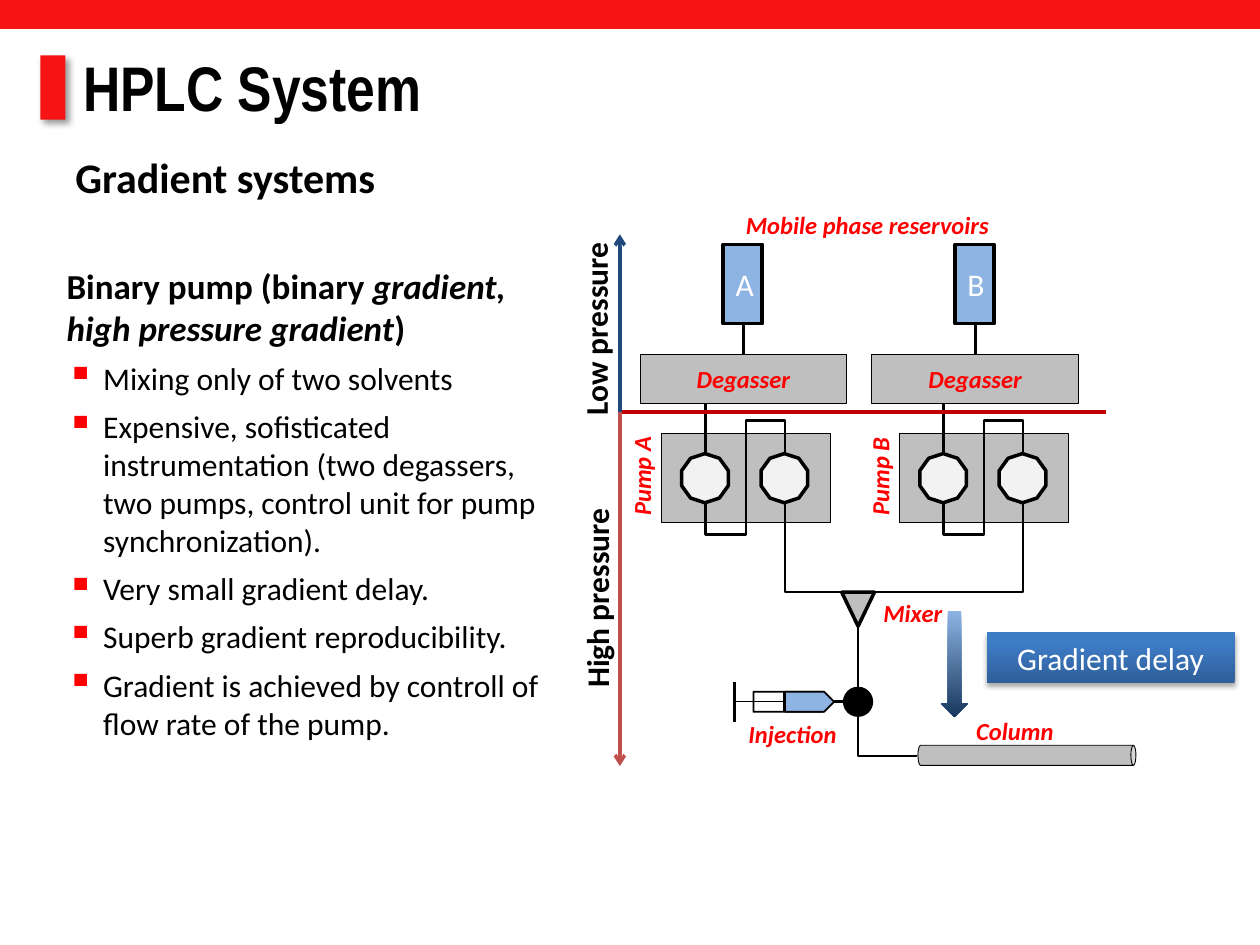
from lxml import etree
from pptx import Presentation
from pptx.dml.color import RGBColor
from pptx.enum.shapes import MSO_CONNECTOR as Link, MSO_SHAPE as Form
from pptx.enum.text import MSO_ANCHOR as Anchor, PP_ALIGN as Align
from pptx.oxml.ns import qn
from pptx.util import Inches, Pt

RED, BAR, GRAY, BLUE, BLACK, WHITE = (
    "FF0000", "F51313", "BFBFBF", "8EB4E3", "000000", "FFFFFF")


def color(code):
    return RGBColor.from_string(code)


def add(parent, tag, **attrs):
    return etree.SubElement(parent, qn(tag), {k: str(v) for k, v in attrs.items()})


def write(para, text, size=14, bold=False, italic=False, ink=BLACK,
          font="Calibri", align=Align.LEFT):
    para.alignment = align
    run = para.add_run()
    run.text = text
    run.font.size, run.font.name = Pt(size), font
    run.font.bold, run.font.italic = bold, italic
    run.font.color.rgb = color(ink)


class Board:
    tag = dict(size=14, bold=True, italic=True, ink=RED, align=Align.CENTER)
    label = dict(size=18, ink=WHITE, align=Align.CENTER)

    def __init__(self, slide):
        self.slide = slide
        self.shapes = slide.shapes

    def paint(self, item, fill, edge, width):
        """Fill is a hex colour, a list of (position, colour) stops or None."""
        item.shadow.inherit = False
        if isinstance(fill, list):
            item.fill.gradient()
            for stop, (pos, code) in zip(item.fill.gradient_stops, fill):
                stop.position, stop.color.rgb = pos, color(code)
        elif fill:
            item.fill.solid()
            item.fill.fore_color.rgb = color(fill)
        else:
            item.fill.background()
        if width:
            item.line.color.rgb, item.line.width = color(edge), Pt(width)
        else:
            item.line.fill.background()

    def shape(self, form, x, y, w, h, fill=None, width=0, turn=0, adj=(),
              text="", **style):
        item = self.shapes.add_shape(form, *map(Inches, (x, y, w, h)))
        self.paint(item, fill, BLACK, width)
        item.rotation = turn
        for i, value in enumerate(adj):
            item.adjustments[i] = value
        if text:
            item.text_frame.vertical_anchor = Anchor.MIDDLE
            write(item.text_frame.paragraphs[0], text, **style)
        return item

    def shade(self, item, alpha, blur, dist, angle):
        effects = item._element.spPr.find(qn("a:effectLst"))
        drop = add(effects, "a:outerShdw", blurRad=Pt(blur), dist=Pt(dist),
                   dir=angle * 60000, algn="tl", rotWithShape=0)
        add(add(drop, "a:srgbClr", val=BLACK), "a:alpha", val=alpha * 1000)

    def line(self, x1, y1, x2, y2, width=1.5, ink=BLACK, arrow=False):
        item = self.shapes.add_connector(
            Link.STRAIGHT, *map(Inches, (x1, y1, x2, y2)))
        item.line.color.rgb, item.line.width = color(ink), Pt(width)
        if arrow:
            add(item.line._get_or_add_ln(), "a:tailEnd", type="arrow")
        add(item._element.spPr, "a:effectLst")

    def tube(self, *points):
        (x, y), *rest = [(Inches(a), Inches(b)) for a, b in points]
        path = self.shapes.build_freeform(x, y)
        path.add_line_segments(rest, close=False)
        self.paint(path.convert_to_shape(), None, BLACK, 1.5)

    def text(self, x, y, w, h, text="", turn=0, **style):
        box = self.shapes.add_textbox(*map(Inches, (x, y, w, h)))
        box.rotation = turn
        box.text_frame.word_wrap = True
        if text:
            write(box.text_frame.paragraphs[0], text, **style)
        return box.text_frame

    def title(self, text):
        item = self.shapes.title
        item.left, item.top, item.width, item.height = map(
            Inches, (0.56, 0.33, 9.1, 0.71))
        item.text_frame.vertical_anchor = Anchor.MIDDLE
        write(item.text_frame.paragraphs[0], text, size=36, bold=True,
              font="Arial Narrow")

    def bullet(self, frame, text):
        para = frame.add_paragraph()
        props = para._p.get_or_add_pPr()
        props.set("marL", str(Inches(0.29)))
        props.set("indent", str(-Inches(0.29)))
        add(add(props, "a:buClr"), "a:srgbClr", val=RED)
        add(props, "a:buSzPct", val=120000)
        add(props, "a:buChar", char="▪")
        para.space_before = Pt(6)
        write(para, text, size=18)

    def pump(self, x):
        """Two pump heads joined by a U-shaped tube."""
        self.shape(Form.RECTANGLE, x, 3.44, 1.34, 0.71, GRAY, 0.5)
        left, mid, right = x + 0.35, x + 0.67, x + 0.98
        self.tube((left, 3.99), (left, 4.24), (mid, 4.24), (mid, 3.34),
                  (right, 3.34), (right, 3.59))
        for head in (left, right):
            self.shape(Form.DECAGON, head - 0.2, 3.61, 0.39, 0.37, "F2F2F2",
                       2, turn=90)

    def supply(self, x, name):
        """Reservoir, degasser and the feed into the pump."""
        mid = x + 0.82
        self.shape(Form.RECTANGLE, mid - 0.16, 1.94, 0.31, 0.63, BLUE, 2,
                   text=name, **self.label)
        self.line(mid, 2.57, mid, 2.81)
        self.shape(Form.RECTANGLE, x, 2.81, 1.64, 0.39, GRAY, 0.5,
                   text="Degasser", **self.tag)


def main():
    deck = Presentation()
    deck.slide_width, deck.slide_height = Inches(10), Inches(7.5)
    board = Board(deck.slides.add_slide(deck.slide_layouts[5]))

    # Header
    mark = board.shape(Form.RECTANGLE, 0.32, 0.44, 0.2, 0.51, BAR)
    board.shade(mark, 40, 4, 3, 45)
    board.shape(Form.RECTANGLE, 0, 0, 10, 0.23, BAR)
    board.title("HPLC System")
    board.text(0.5, 1.15, 9, 0.71, "Gradient systems", size=24, bold=True)

    # Pumps and solvent supply
    for pump, degas, name in ((5.25, 5.08, "A"), (7.14, 6.92, "B")):
        board.pump(pump)
        board.line(pump + 0.35, 3.13, pump + 0.35, 3.59)
        board.supply(degas, name)

    # Mixer and column
    board.shape(Form.CAN, 8.07, 5.13, 0.16, 1.73, GRAY, 0.5, turn=90)
    board.tube((6.81, 4.97), (6.81, 6), (7.28, 6))
    board.tube((6.23, 3.99), (6.23, 4.7), (6.68, 4.7))
    board.tube((8.12, 3.99), (8.12, 4.7), (6.94, 4.7))
    board.shape(Form.ISOSCELES_TRIANGLE, 6.68, 4.7, 0.26, 0.27, GRAY, 2, turn=180)

    # Syringe and injection point
    board.line(5.83, 5.57, 6.22, 5.57, 0.75)
    board.shape(Form.RIGHT_ARROW, 5.98, 5.49, 0.63, 0.16, None, 1, adj=(1, 0.5))
    board.line(6.22, 5.49, 6.22, 5.65, 0.75)
    board.line(5.83, 5.41, 5.83, 5.73, 2)
    board.shape(Form.RIGHT_ARROW, 6.23, 5.49, 0.39, 0.16, BLUE, 1, adj=(1, 0.5))
    board.line(6.62, 5.57, 6.81, 5.57)
    board.shape(Form.OVAL, 6.69, 5.45, 0.24, 0.24, BLACK)

    # Part names
    for text, x, y, w, turn in (
            ("Mixer", 6.81, 4.7, 0.87, 0),
            ("Pump A", 4.66, 3.61, 0.87, 270),
            ("Pump B", 6.55, 3.61, 0.87, 270),
            ("Column", 7.62, 5.63, 0.87, 0),
            ("Injection", 5.78, 5.66, 1.02, 0),
            ("Mobile phase reservoirs", 5.78, 1.62, 2.21, 0)):
        board.text(x, y, w, 0.34, text, turn, **board.tag)

    # Pressure zones
    board.line(4.92, 3.27, 8.78, 3.27, 2, "C00000")
    board.line(4.92, 3.27, 4.92, 6.08, 2, "C0504D", arrow=True)
    board.line(4.92, 3.27, 4.92, 1.86, 2, "1F497D", arrow=True)
    board.text(3.92, 2.39, 1.61, 0.4, "Low pressure", 270, size=18, bold=True)
    board.text(3.75, 4.37, 1.97, 0.4, "High pressure", 270, size=18, bold=True)

    # Description
    frame = board.text(0.43, 2.05, 4.12, 3.92)
    for text, slant in (("Binary pump (binary", False),
                        (" gradient, high pressure gradient", True),
                        (")", False)):
        write(frame.paragraphs[0], text, size=20, bold=True, italic=slant)
    for text in (
            "Mixing only of two solvents",
            "Expensive, sofisticated instrumentation (two degassers, "
            "two pumps, control unit for pump synchronization).",
            "Very small gradient delay.",
            "Superb gradient reproducibility.",
            "Gradient is achieved by controll of flow rate of the pump."):
        board.bullet(frame, text)

    # Gradient delay
    delay = board.shape(Form.RECTANGLE, 7.83, 5.02, 1.97, 0.4,
                        [(0, "2F5F99"), (0.8, "3D7CC7")],
                        text="Gradient delay", **board.label)
    delay.fill.gradient_angle = 90
    board.shade(delay, 35, 3.1, 1.8, 90)
    down = board.shape(Form.DOWN_ARROW, 7.47, 4.85, 0.21, 0.84,
                       [(0, BLUE), (1, "17375E")])
    down.fill.gradient_angle = 270

    deck.save("out.pptx")


if __name__ == "__main__":
    main()
